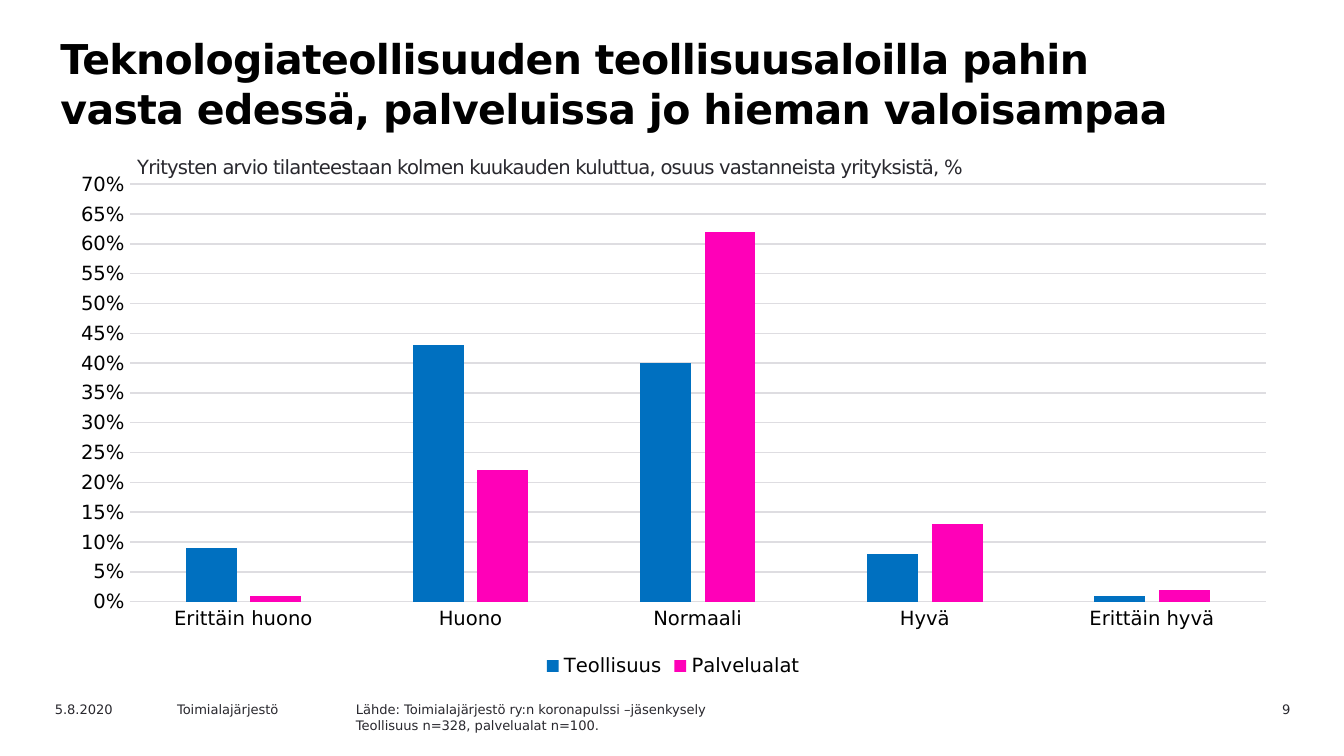
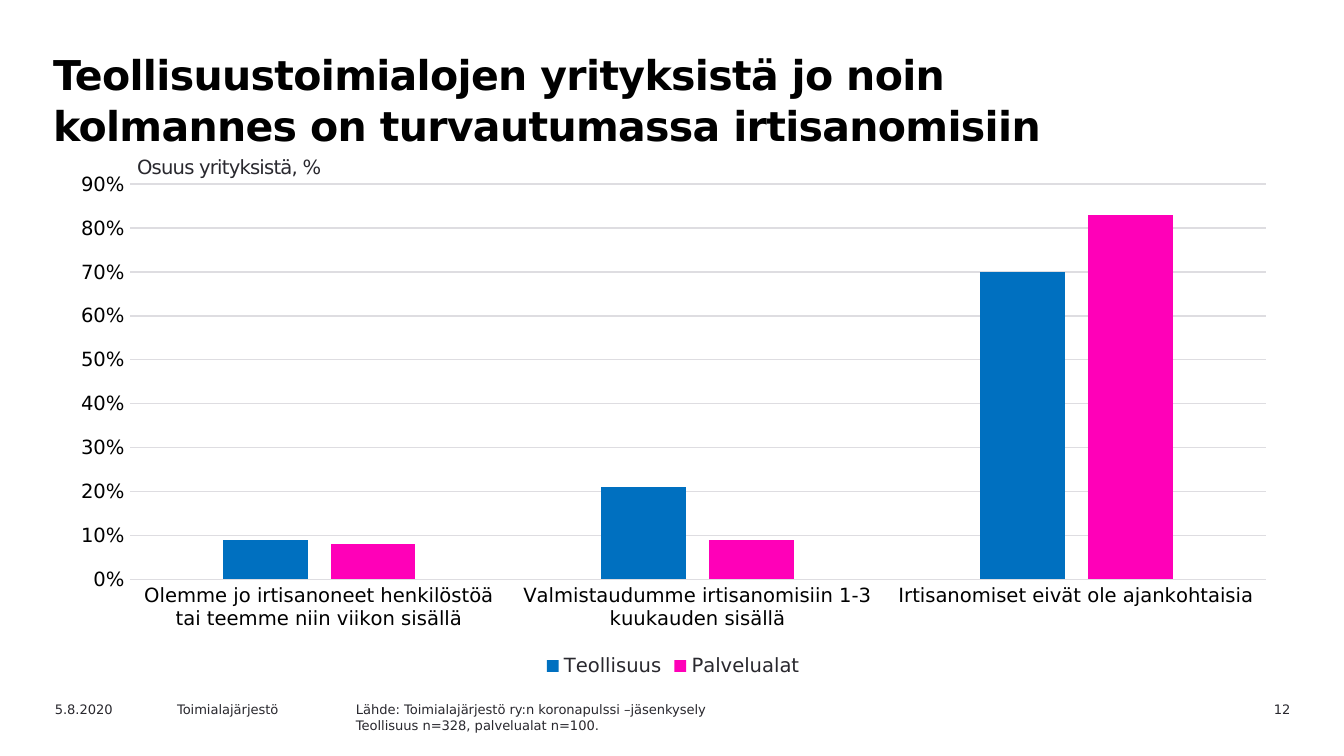
"""Builds two slides of survey results, each with a clustered column chart."""
from pptx import Presentation
from pptx.chart.data import CategoryChartData
from pptx.dml.color import RGBColor
from pptx.enum.chart import XL_CHART_TYPE as CT, XL_LEGEND_POSITION as LP, XL_TICK_MARK as TM
from pptx.enum.text import MSO_ANCHOR as ANCHOR, MSO_AUTO_SIZE as AUTO, PP_ALIGN as AL
from pptx.util import Pt

FONT = "DejaVu Sans"
BLACK, DARK, GRID = "000000", "29282E", "DEDDE1"
COLORS = ["0070C0", "FF00B8"]
FOOTERS = [
    (22.3, 72, "5.8.2020"),
    (87.8, 102.2, "Toimialajärjestö"),
    (183.6, 234, "Lähde: Toimialajärjestö ry:n koronapulssi –jäsenkysely\n"
                 "Teollisuus n=328, palvelualat n=100."),
]
SLIDES = [
    dict(title="Teknologiateollisuuden teollisuusaloilla pahin vasta edessä, "
               "palveluissa jo hieman valoisampaa",
         title_box=(23.8, 13.7, 616, 51.1), number="9",
         subtitle="Yritysten arvio tilanteestaan kolmen kuukauden kuluttua, "
                  "osuus vastanneista yrityksistä, %",
         subtitle_width=504.7, top=0.7, step=0.05, legend=BLACK,
         cats=["Erittäin huono", "Huono", "Normaali", "Hyvä", "Erittäin hyvä"],
         series={"Teollisuus": [0.09, 0.43, 0.4, 0.08, 0.01],
                 "Palvelualat": [0.01, 0.22, 0.62, 0.13, 0.02]}),
    dict(title="Teollisuustoimialojen yrityksistä jo noin kolmannes on "
               "turvautumassa irtisanomisiin",
         title_box=(19.8, 22.3, 629.3, 51.1), number="12",
         subtitle="Osuus yrityksistä, %",
         subtitle_width=244, top=0.9, step=0.1, legend=DARK,
         cats=["Olemme jo irtisanoneet henkilöstöä tai teemme niin viikon sisällä",
               "Valmistaudumme irtisanomisiin 1-3 kuukauden sisällä",
               "Irtisanomiset eivät ole ajankohtaisia"],
         series={"Teollisuus": [0.09, 0.21, 0.7],
                 "Palvelualat": [0.08, 0.09, 0.83]}),
]


def style(font, size, color, bold=False):
    font.name, font.size, font.bold = FONT, Pt(size), bold
    font.color.rgb = RGBColor.from_string(color)


def write(sp, box, text, size, color, align=AL.LEFT, bold=False, spacing=0):
    sp.left, sp.top, sp.width, sp.height = [Pt(v) for v in box]
    tf = sp.text_frame
    tf.text = text
    tf.word_wrap, tf.auto_size, tf.vertical_anchor = True, AUTO.NONE, ANCHOR.TOP
    for p in tf.paragraphs:
        p.alignment = align
        style(p.font, size, color, bold)
        if spacing:
            for r in p.runs:
                r.font._element.set("spc", str(spacing))
    return tf


prs = Presentation()
prs.slide_width, prs.slide_height = Pt(720), Pt(405)

for data in SLIDES:
    s = prs.slides.add_slide(prs.slide_layouts[5])
    tf = write(s.shapes.title, data["title_box"], data["title"], 22, BLACK, bold=True, spacing=-34)
    p = tf.paragraphs[0]
    p.line_spacing = Pt(27)
    p._p.get_or_add_pPr().set("marL", str(Pt(1.4)))

    chart_data = CategoryChartData(number_format="0%")
    chart_data.categories = data["cats"]
    for name, values in data["series"].items():
        chart_data.add_series(name, values)
    chart = s.shapes.add_chart(CT.COLUMN_CLUSTERED, Pt(30.2), Pt(87.1), Pt(661), Pt(278.6),
                               chart_data).chart
    chart.has_title = False
    style(chart.font, 10, DARK)
    chart.has_legend = True
    chart.legend.position = LP.BOTTOM
    chart.legend.include_in_layout = False
    style(chart.legend.font, 10.5, data["legend"])

    plot = chart.plots[0]
    plot.gap_width, plot.overlap, plot.vary_by_categories = 219, -27, False
    for series, color in zip(plot.series, COLORS):
        series.format.fill.solid()
        series.format.fill.fore_color.rgb = RGBColor.from_string(color)
        series.invert_if_negative = False

    cat, val = chart.category_axis, chart.value_axis
    for axis in (cat, val):
        axis.major_tick_mark = axis.minor_tick_mark = TM.NONE
        style(axis.tick_labels.font, 10.5, BLACK)
    val.minimum_scale, val.maximum_scale, val.major_unit = 0, data["top"], data["step"]
    val.tick_labels.number_format, val.tick_labels.number_format_is_linked = "0%", False
    val.format.line.fill.background()
    for line in (cat.format.line, val.major_gridlines.format.line):
        line.width = Pt(0.75)
        line.color.rgb = RGBColor.from_string(GRID)

    for left, width, text in FOOTERS:
        write(s.shapes.add_textbox(0, 0, 0, 0), (left, 372.2, width, 13), text, 7, DARK)
    write(s.shapes.add_textbox(0, 0, 0, 0), (630.7, 372.2, 67.7, 13), data["number"], 7, DARK,
          align=AL.RIGHT)

    tf = write(s.shapes.add_textbox(0, 0, 0, 0), (70.6, 80.2, data["subtitle_width"], 18.7),
               data["subtitle"], 10.5, DARK, spacing=-40)
    tf.margin_left = tf.margin_right = tf.margin_top = tf.margin_bottom = Pt(2.9)

prs.save("out.pptx")
